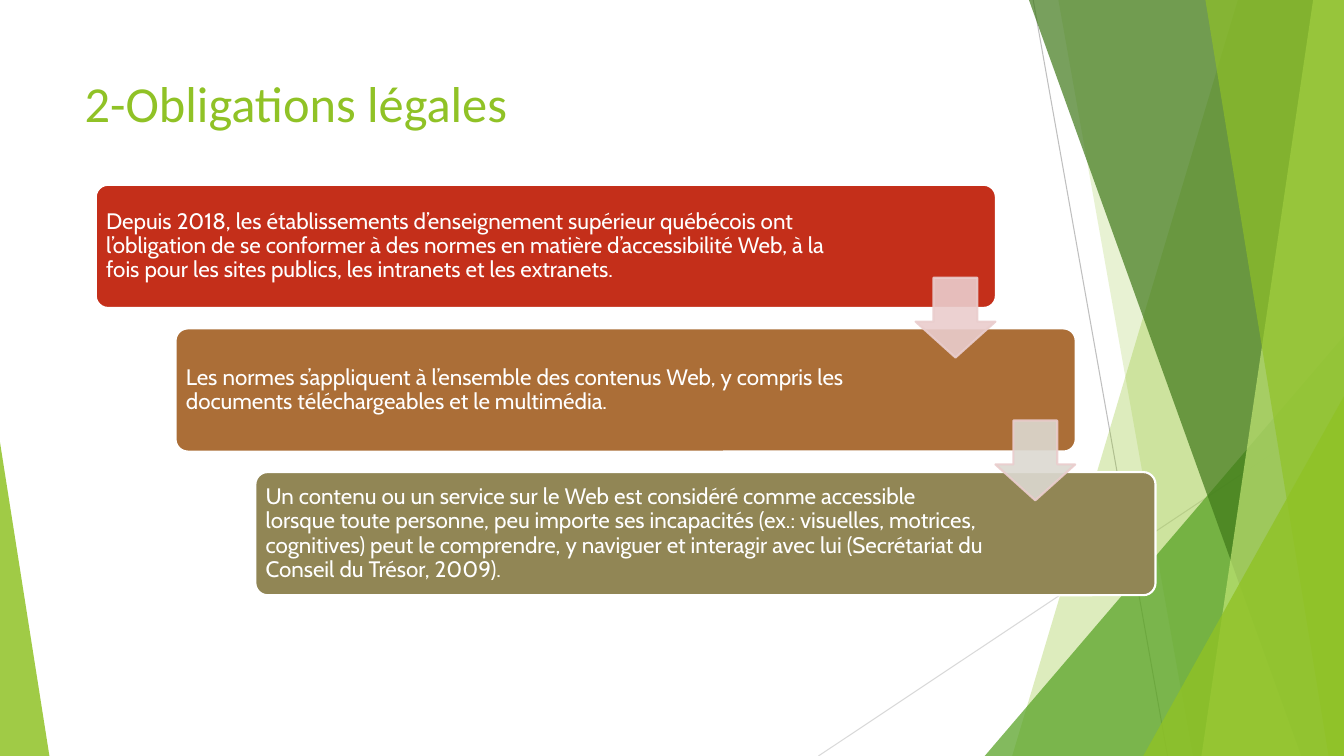
from dataclasses import dataclass

from pptx import Presentation
from pptx.dml.color import RGBColor
from pptx.enum.shapes import MSO_CONNECTOR, MSO_SHAPE
from pptx.enum.text import MSO_ANCHOR
from pptx.oxml.ns import qn
from pptx.util import Pt
from lxml.etree import SubElement


@dataclass(frozen=True)
class Theme:
    lime: str = "90C226"
    green: str = "54A021"
    forest: str = "3F7819"
    pale: str = "C0E474"
    white: str = "FFFFFF"
    rule_dark: str = "BFBFBF"
    rule_light: str = "D9D9D9"
    steps: tuple = ("C42F1A", "AB6E37", "918655")
    arrows: tuple = ("EACDCD", "DCD9D1")
    arrow_line: str = "EACDCD"
    title_font: str = "Calibri"
    body_font: str = "Cabin"
    title_size: float = 36
    body_size: float = 16


class Deck:
    """Draws styled elements on the current slide, with lengths in points."""

    def __init__(self, slide, theme):
        self.s, self.theme = slide, theme

    def style(self, sp, fill, alpha=100, line=None):
        sp.shadow.inherit = False
        sp.fill.solid()
        sp.fill.fore_color.rgb = RGBColor.from_string(fill)
        if line:
            sp.line.color.rgb = RGBColor.from_string(line)
            sp.line.width = Pt(1.5)
        else:
            sp.line.fill.background()
        if alpha < 100:
            for clr in sp.element.spPr.iter(qn("a:srgbClr")):
                SubElement(clr, qn("a:alpha")).set("val", str(alpha * 1000))

    def shape(self, kind, box, fill, adj, **look):
        sp = self.s.shapes.add_shape(kind, *map(Pt, box))
        for i, value in enumerate(adj):
            sp.adjustments[i] = value
        self.style(sp, fill, **look)

    def panel(self, top_x, bottom_x, fill, alpha):
        fb = self.s.shapes.build_freeform(Pt(top_x), Pt(0))
        fb.add_line_segments([(Pt(x), Pt(y)) for x, y in ((W, 0), (W, H), (bottom_x, H))])
        self.style(fb.convert_to_shape(), fill, alpha)

    def line(self, start, end, color):
        c = self.s.shapes.add_connector(MSO_CONNECTOR.STRAIGHT, *map(Pt, start + end))
        c.line.color.rgb = RGBColor.from_string(color)
        c.line.width = Pt(0.75)
        SubElement(c.element.spPr, qn("a:effectLst"))

    def text(self, box, text, font, color, frame=None, para=None):
        tf = self.s.shapes.add_textbox(*map(Pt, box)).text_frame
        p = tf.paragraphs[0]
        r = p.add_run()
        r.text = text
        r.font.color.rgb = RGBColor.from_string(color)
        formats = ((tf, {"word_wrap": True, **(frame or {})}), (p, para or {}), (r.font, font))
        for target, values in formats:
            for name, value in values.items():
                setattr(target, name, value)


W, H = 960, 540
STEP_X, STEP_Y = 57, 102.6
STEPS = (
    (548, "Depuis 2018, les établissements d’enseignement supérieur québécois ont l’obligation "
          "de se conformer à des normes en matière d’accessibilité Web, à la fois pour les sites "
          "publics, les intranets et les extranets."),
    (523.5, "Les normes s’appliquent à l’ensemble des contenus Web, y compris les documents "
            "téléchargeables et le multimédia."),
    (523.5, "Un contenu ou un service sur le Web est considéré comme accessible lorsque toute "
            "personne, peu importe ses incapacités (ex.: visuelles, motrices, cognitives) peut le "
            "comprendre, y naviguer et interagir avec lui (Secrétariat du Conseil du Trésor, 2009)."),
)


def draw_backdrop(d):
    t = d.theme
    d.line((738, 0), (834, H), t.rule_dark)
    d.line((W, 290), (584.6, H), t.rule_light)
    d.panel(884.2, 723, t.lime, 30)
    d.panel(756, 852, t.lime, 20)
    d.shape(MSO_SHAPE.ISOSCELES_TRIANGLE, (703.4, 240, 256.6, 300), t.green, [1], alpha=72)
    d.panel(735, 929.5, t.forest, 70)
    d.panel(938, 858.2, t.pale, 70)
    d.panel(861, 949, t.lime, 65)
    d.shape(MSO_SHAPE.ISOSCELES_TRIANGLE, (816.6, 283, 143.4, 257), t.lime, [1], alpha=80)
    d.shape(MSO_SHAPE.ISOSCELES_TRIANGLE, (0, 316, 35.3, 224), t.lime, [0], alpha=85)


def draw_steps(d):
    t = d.theme
    margins = ("margin_left", "margin_top", "margin_right", "margin_bottom")
    frame = {"vertical_anchor": MSO_ANCHOR.MIDDLE, **dict.fromkeys(margins, Pt(4.8))}
    para = {"line_spacing": 0.9, "space_after": Pt(5.6)}
    font = {"name": t.body_font, "size": Pt(t.body_size)}
    for i, (width, text) in enumerate(STEPS):
        x, y = 68.4 + i * STEP_X, 132 + i * STEP_Y
        d.shape(MSO_SHAPE.ROUNDED_RECTANGLE, (x, y, 643, 88), t.steps[i], [0.1], line=t.white)
        d.text((x + 2.6, y + 2.6, width, 82.8), text, font, t.white, frame, para)
    for i, fill in enumerate(t.arrows):
        box = (654 + i * STEP_X, 198.4 + i * 102, 57, 57)
        d.shape(MSO_SHAPE.DOWN_ARROW, box, fill, [0.55, 0.45], alpha=90, line=t.arrow_line)


def main():
    prs = Presentation()
    prs.slide_width, prs.slide_height = Pt(W), Pt(H)
    t = Theme()
    d = Deck(prs.slides.add_slide(prs.slide_layouts[6]), t)
    draw_backdrop(d)
    d.text((53.4, 48, 677, 104), "2-Obligations légales",
           {"name": t.title_font, "size": Pt(t.title_size)}, t.lime)
    draw_steps(d)
    prs.save("out.pptx")


if __name__ == "__main__":
    main()
